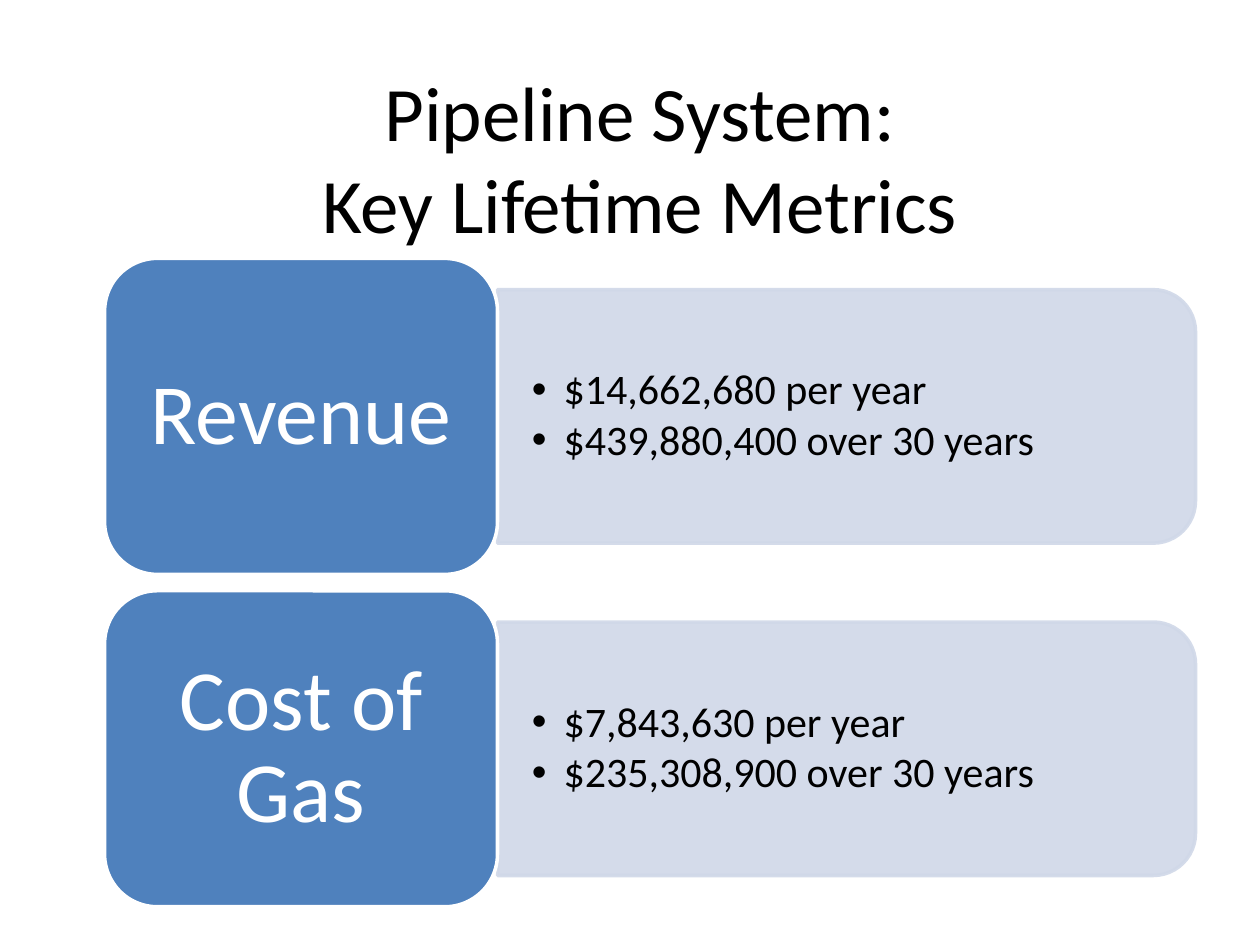
"""Build the slide of key lifetime metrics for a pipeline system."""
from lxml.etree import SubElement
from pptx import Presentation
from pptx.dml.color import RGBColor
from pptx.enum.shapes import MSO_SHAPE
from pptx.enum.text import MSO_ANCHOR, MSO_AUTO_SIZE, PP_ALIGN
from pptx.oxml.ns import qn
from pptx.util import Cm, Pt

COLORS = {"text": "000000", "label": "4F81BD", "panel": "D0D8E8", "white": "FFFFFF"}
METRICS = [
    ("Revenue", ["$14,662,680 per year", "$439,880,400 over 30 years"]),
    ("Cost of Gas", ["$7,843,630 per year", "$235,308,900 over 30 years"]),
]
LEFT, TOP, STEP = 2.11, 5.21, 6.7
LABEL_WIDTH, LABEL_HEIGHT = 7.92, 6.37
PANEL_LENGTH, PANEL_HEIGHT = 14.07, 5.11
LIST_WIDTH, LIST_HEIGHT = 13.84, 4.6


def add_span(para, text, size, color):
    span = para.add_run()
    span.text = text
    span.font.name = "Calibri"
    span.font.size = Pt(size)
    span.font.color.rgb = RGBColor.from_string(COLORS[color])


def add_block(page, kind, left, top, width, height, fill, line):
    block = page.shapes.add_shape(kind, Cm(left), Cm(top), Cm(width), Cm(height))
    block.shadow.inherit = False
    block.fill.solid()
    block.fill.fore_color.rgb = RGBColor.from_string(COLORS[fill])
    block.line.color.rgb = RGBColor.from_string(COLORS[line])
    block.line.width = Pt(2)
    return block


deck = Presentation()
deck.slide_width, deck.slide_height = Cm(25.4), Cm(19.05)
page = deck.slides.add_slide(deck.slide_layouts[3])

title, *lists = page.placeholders
title.left, title.top, title.width, title.height = Cm(LEFT), Cm(1.12), Cm(21.59), Cm(4.09)
title.text_frame.vertical_anchor = MSO_ANCHOR.MIDDLE
title.text_frame.auto_size = MSO_AUTO_SIZE.NONE
para = title.text_frame.paragraphs[0]
para.alignment = PP_ALIGN.CENTER
add_span(para, "Pipeline System:", 44, "text")
para.add_line_break()
add_span(para, "Key Lifetime Metrics", 44, "text")

for row, ((name, figures), box) in enumerate(zip(METRICS, lists)):
    top = TOP + row * STEP
    middle = top + LABEL_HEIGHT / 2
    panel_left = LEFT + LABEL_WIDTH

    panel = add_block(
        page, MSO_SHAPE.ROUND_2_SAME_RECTANGLE,
        panel_left + (PANEL_LENGTH - PANEL_HEIGHT) / 2, middle - PANEL_LENGTH / 2,
        PANEL_HEIGHT, PANEL_LENGTH, "panel", "panel",
    )
    panel.rotation = 90
    for color in panel._element.spPr.iter(qn("a:srgbClr")):
        SubElement(color, qn("a:alpha"), val="90000")

    page.shapes._spTree.append(box._element)
    box.left, box.top = Cm(panel_left), Cm(middle - LIST_HEIGHT / 2)
    box.width, box.height = Cm(LIST_WIDTH), Cm(LIST_HEIGHT)
    frame = box.text_frame
    frame.auto_size = MSO_AUTO_SIZE.NONE
    frame.vertical_anchor = MSO_ANCHOR.MIDDLE
    frame.margin_left = frame.margin_right = Cm(0.69)
    frame.margin_top = frame.margin_bottom = Cm(0.36)
    for index, figure in enumerate(figures):
        para = frame.add_paragraph() if index else frame.paragraphs[0]
        para.line_spacing = 0.9
        para.space_before, para.space_after = Pt(0), Pt(3)
        properties = para._p.get_or_add_pPr()
        properties.set("marL", str(Cm(0.64)))
        properties.set("indent", str(Cm(-0.64)))
        SubElement(properties, qn("a:buChar"), char="•")
        add_span(para, figure, 24, "text")

    label = add_block(
        page, MSO_SHAPE.ROUNDED_RECTANGLE, LEFT, top,
        LABEL_WIDTH, LABEL_HEIGHT, "label", "white",
    )
    frame = label.text_frame
    frame.word_wrap = True
    frame.vertical_anchor = MSO_ANCHOR.MIDDLE
    frame.margin_left = frame.margin_right = Cm(0.51)
    frame.margin_top = frame.margin_bottom = Cm(0.25)
    para = frame.paragraphs[0]
    para.alignment = PP_ALIGN.CENTER
    para.line_spacing = 0.9
    add_span(para, name, 49, "white")

deck.save("out.pptx")
